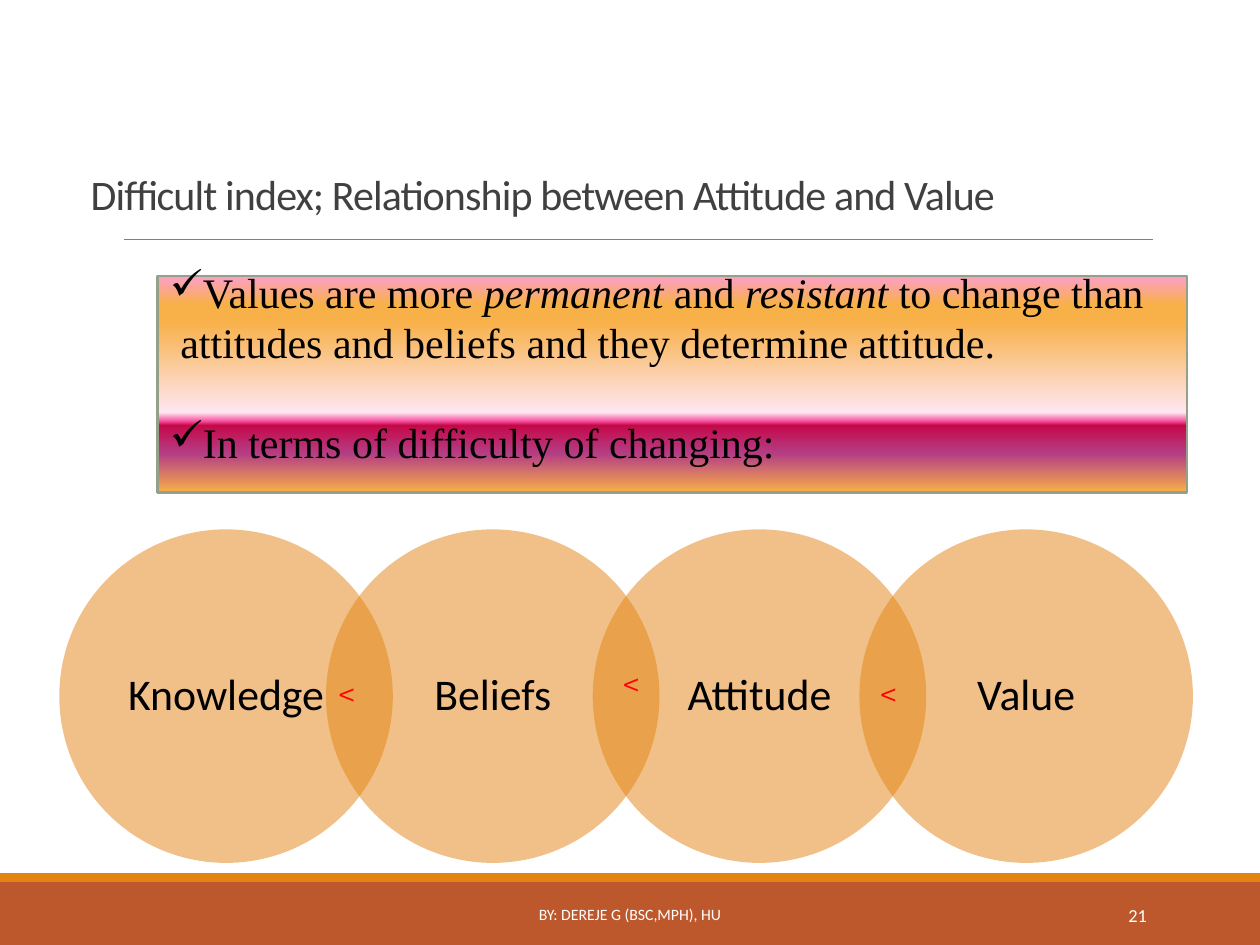
from lxml.etree import SubElement
from pptx import Presentation
from pptx.dml.color import RGBColor
from pptx.enum.shapes import MSO_CONNECTOR as CONN, MSO_SHAPE as SHAPE
from pptx.enum.text import MSO_ANCHOR as ANCHOR, PP_ALIGN as ALIGN
from pptx.oxml.ns import qn
from pptx.util import Pt

TITLE = "Difficult index; Relationship between Attitude and Value"
POINTS = [
    [("Values are more ", False), ("permanent", True), (" and ", False), ("resistant", True),
     (" to change than attitudes and beliefs and they determine attitude.", False)],
    [("In terms of difficulty of changing:", False)],
]
CIRCLES = ["Knowledge", "Beliefs", "Attitude", "Value"]
SIGNS = [(185.8, 382.3), (348.5, 376.6), (495.4, 382.3)]
FOOTER = [
    ("BY: DEREJE G (BSC,MPH), HU", (217.4, 508.3, 285.1, 28.8), 9, ALIGN.CENTER),
    ("21", (584.6, 508.3, 77.8, 28.8), 10.5, ALIGN.RIGHT),
]
COLORS = {"rust": "BD582C", "orange": "E48312", "rule": "808080", "title": "404040",
          "black": "000000", "white": "FFFFFF", "red": "FF0000", "border": "94A088"}
GRADIENT = [(0, "FC9FCB"), (13, "F8B049"), (21, "F8B049"), (63, "FEE7F2"),
            (67, "F952A0"), (69, "C50849"), (82, "B43E85"), (100, "F8B049")]
DIAMETER, STEP, LEFT, TOP = 190.6, 152.4, 33.9, 302.5
INNER = 134.8
LINE = 28.6


def rgb(name):
    """Return the colour stored under a name."""
    return RGBColor.from_string(COLORS[name])


def set_all(obj, **values):
    """Set each given attribute on an object."""
    for name, value in values.items():
        setattr(obj, name, value)


def add_run(p, text, size, color, font="Calibri", italic=False):
    """Add one formatted run to a paragraph."""
    r = p.add_run()
    r.text = text
    set_all(r.font, size=Pt(size), name=font, italic=italic)
    r.font.color.rgb = rgb(color)
    return r


def add_shape(s, kind, box, color):
    """Add a filled shape without outline or shadow."""
    sp = s.shapes.add_shape(kind, *map(Pt, box))
    sp.shadow.inherit = False
    sp.fill.solid()
    sp.fill.fore_color.rgb = rgb(color)
    sp.line.fill.background()
    return sp


def add_text(s, text, box, size, color, align=ALIGN.LEFT, anchor=ANCHOR.MIDDLE, font="Calibri"):
    """Add a one-line text box and return its text frame."""
    tf = s.shapes.add_textbox(*map(Pt, box)).text_frame
    set_all(tf, word_wrap=True, vertical_anchor=anchor)
    p = tf.paragraphs[0]
    p.alignment = align
    add_run(p, text, size, color, font)
    return tf


def add_frame(s):
    """Add the bottom bands, the rule and the title."""
    add_shape(s, SHAPE.RECTANGLE, (0, 504, 720, 36), "rust")
    add_shape(s, SHAPE.RECTANGLE, (0, 499, 720, 5), "orange")
    rule = s.shapes.add_connector(CONN.STRAIGHT, Pt(70.6), Pt(136.8), Pt(658.8), Pt(136.8))
    rule.line.color.rgb = rgb("rule")
    rule.line.width = Pt(0.5)
    SubElement(rule._element.spPr, qn("a:effectLst"))
    title = s.shapes.title
    set_all(title, left=Pt(44.6), top=Pt(84.2), width=Pt(648), height=Pt(44.6))
    tf = title.text_frame
    set_all(tf, word_wrap=True, vertical_anchor=ANCHOR.BOTTOM)
    p = tf.paragraphs[0]
    set_all(p, alignment=ALIGN.LEFT, line_spacing=0.85)
    r = add_run(p, TITLE, 24, "title")
    r.font._element.set("spc", "-50")


def add_circles(s):
    """Add the row of overlapping translucent circles with labels."""
    inset = (DIAMETER - INNER) / 2
    for i, label in enumerate(CIRCLES):
        x = LEFT + i * STEP
        sp = add_shape(s, SHAPE.OVAL, (x, TOP, DIAMETER, DIAMETER), "orange")
        color = sp._element.spPr.find(qn("a:solidFill"))[0]
        SubElement(color, qn("a:alpha"), val="50000")
        tf = add_text(s, label, (x + inset, TOP + inset, INNER, INNER), 25, "black", ALIGN.CENTER)
        set_all(tf, margin_left=Pt(10.8), margin_right=Pt(10.8), margin_top=Pt(2), margin_bottom=Pt(2))
        tf.paragraphs[0].line_spacing = 0.9


def add_points(s):
    """Add the gradient panel with its checked points."""
    sp = add_shape(s, SHAPE.RECTANGLE, (90, 157.7, 588.2, 123.8), "white")
    sp.fill.gradient()
    sp.fill.gradient_angle = 270
    stops = sp._element.spPr.find(qn("a:gradFill")).find(qn("a:gsLst"))
    for old in list(stops):
        stops.remove(old)
    for pos, color in GRADIENT:
        stop = SubElement(stops, qn("a:gs"), pos=str(pos * 1000))
        SubElement(stop, qn("a:srgbClr"), val=color)
    sp.line.color.rgb = rgb("border")
    sp.line.width = Pt(1.25)
    tf = sp.text_frame
    set_all(tf, word_wrap=True, vertical_anchor=ANCHOR.MIDDLE, margin_top=0, margin_bottom=Pt(19.6))
    for i, runs in enumerate(POINTS):
        p = tf.add_paragraph() if i else tf.paragraphs[0]
        set_all(p, alignment=ALIGN.LEFT, line_spacing=Pt(LINE), space_before=Pt(i * LINE))
        pPr = p._p.get_or_add_pPr()
        pPr.set("marL", str(Pt(6)))
        pPr.set("indent", str(-Pt(6)))
        SubElement(pPr, qn("a:buChar"), char="✓")
        for text, italic in runs:
            add_run(p, text, 24, "black", "Times New Roman", italic)


def main():
    """Build and save the slide."""
    prs = Presentation()
    set_all(prs, slide_width=Pt(720), slide_height=Pt(540))
    s = prs.slides.add_slide(prs.slide_layouts[5])
    add_frame(s)
    add_circles(s)
    for text, box, size, align in FOOTER:
        add_text(s, text, box, size, "white", align)
    for x, y in SIGNS:
        add_text(s, "<", (x, y, 33.8, 28.8), 18, "red", anchor=ANCHOR.TOP, font="Montserrat")
    add_points(s)
    prs.save("out.pptx")


if __name__ == "__main__":
    main()
